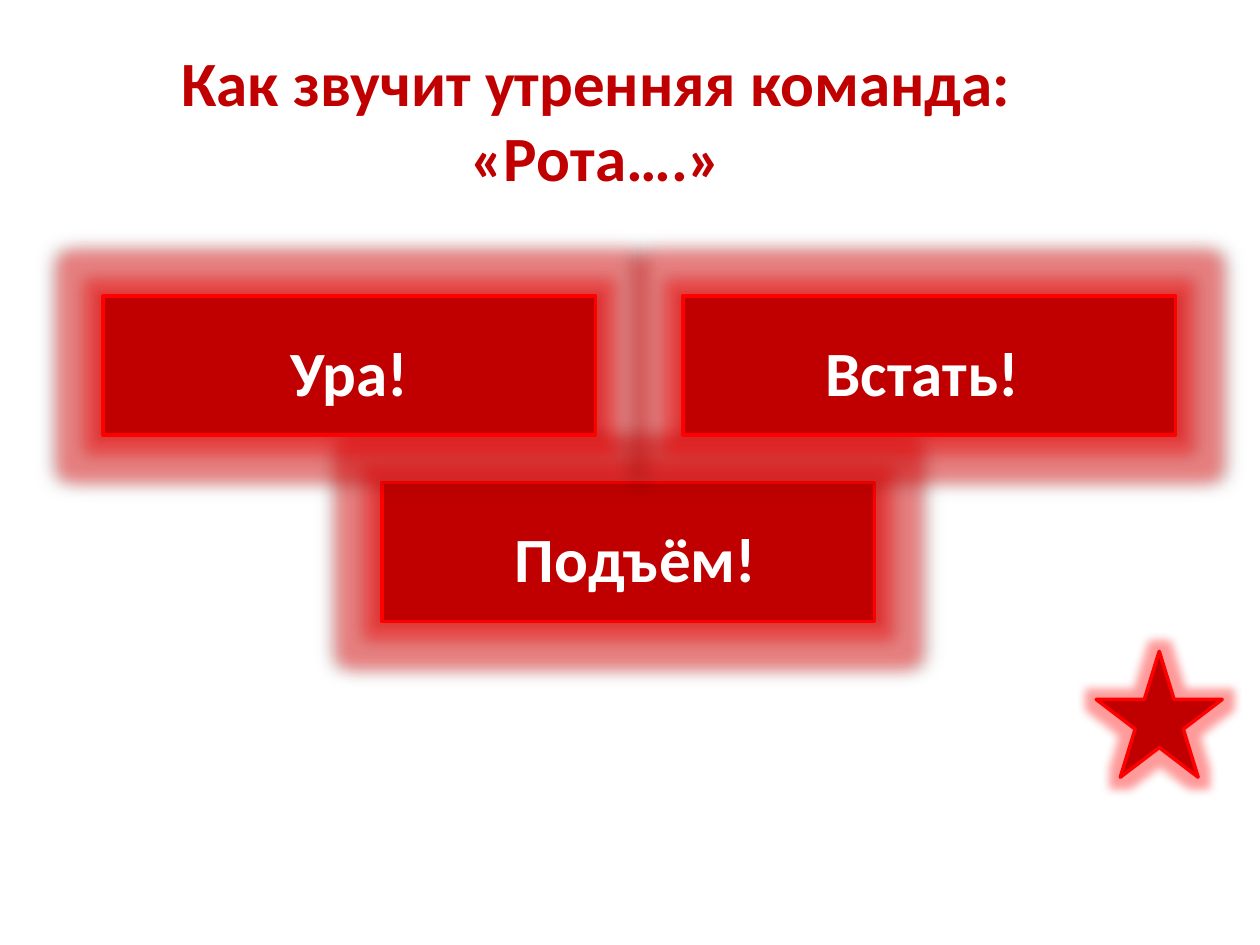
from dataclasses import dataclass

from lxml import etree
from pptx import Presentation
from pptx import util as u
from pptx.dml.color import RGBColor
from pptx.enum import shapes, text
from pptx.oxml.ns import qn


@dataclass(frozen=True)
class Theme:
    font: str = "Calibri"
    size: u.Pt = u.Pt(36)
    crimson: RGBColor = RGBColor(0xC0, 0x00, 0x00)
    red: RGBColor = RGBColor(0xFF, 0x00, 0x00)
    white: RGBColor = RGBColor(0xFF, 0xFF, 0xFF)
    black: RGBColor = RGBColor(0x00, 0x00, 0x00)
    outline: u.Pt = u.Pt(2)


@dataclass(frozen=True)
class Answer:
    label: str
    left: float
    top: float


THEME = Theme()
ANSWER_WIDTH, ANSWER_HEIGHT = 9.93, 2.8
STAR_SIZE = 2.54
ANSWERS = [
    Answer(" Подъём!", 7.7, 9.73),
    Answer("Ура!", 2.08, 5.97),
    Answer("Встать! ", 13.77, 5.97),
]


def add_effect(effects, tag: str, color: RGBColor, **attributes: str) -> None:
    effect = etree.SubElement(effects, qn(tag), attributes)
    tint = etree.SubElement(effect, qn("a:srgbClr"), val=str(color))
    etree.SubElement(tint, qn("a:alpha"), val="40000")


def add_glowing(slide, kind, left: float, top: float, width: float, height: float,
                glow: u.Pt, shaded: bool = False):
    """Crimson shape with a red outline and halo; positions in centimetres."""
    shape = slide.shapes.add_shape(kind, u.Cm(left), u.Cm(top), u.Cm(width), u.Cm(height))
    shape.fill.solid()
    shape.fill.fore_color.rgb = THEME.crimson
    shape.line.color.rgb = THEME.red
    shape.line.width = THEME.outline
    shape.shadow.inherit = False
    effects = shape._element.spPr.find(qn("a:effectLst"))
    add_effect(effects, "a:glow", THEME.red, rad=str(glow))
    if shaded:
        add_effect(effects, "a:outerShdw", THEME.black, blurRad=str(u.Pt(5)),
                   sx="102000", sy="102000", algn="ctr", rotWithShape="0")
    return shape


def write(frame, words: str, color: RGBColor):
    frame.word_wrap = True
    paragraph = frame.paragraphs[0]
    paragraph.text = words
    paragraph.alignment = text.PP_ALIGN.CENTER
    font = paragraph.font
    font.name, font.size, font.bold = THEME.font, THEME.size, True
    font.color.rgb = color
    return paragraph


def add_answer(slide, answer: Answer) -> None:
    button = add_glowing(slide, shapes.MSO_SHAPE.RECTANGLE, answer.left, answer.top,
                         ANSWER_WIDTH, ANSWER_HEIGHT, u.Pt(18), shaded=True)
    button.text_frame.vertical_anchor = text.MSO_ANCHOR.MIDDLE
    label = write(button.text_frame, answer.label, THEME.white)
    label.line_spacing = 1.15
    label.space_after = u.Pt(10)


def add_question(slide, words: str) -> None:
    question = slide.shapes.title
    question.left, question.top = u.Cm(2.31), u.Cm(0.74)
    question.width, question.height = u.Cm(19.41), u.Cm(3.33)
    frame = question.text_frame
    frame.vertical_anchor = text.MSO_ANCHOR.TOP
    frame.auto_size = text.MSO_AUTO_SIZE.SHAPE_TO_FIT_TEXT
    write(frame, words, THEME.crimson)


def main() -> None:
    deck = Presentation()
    deck.slide_width, deck.slide_height = u.Cm(25.4), u.Cm(19.05)
    slide = deck.slides.add_slide(deck.slide_layouts[5])

    # Question
    add_question(slide, "Как звучит утренняя команда: «Рота….»")

    # Answer buttons
    for answer in ANSWERS:
        add_answer(slide, answer)

    # Star in the corner
    add_glowing(slide, shapes.MSO_SHAPE.STAR_5_POINT, 22.1, 13.13,
                STAR_SIZE, STAR_SIZE, u.Pt(11))

    deck.save("out.pptx")


if __name__ == "__main__":
    main()
